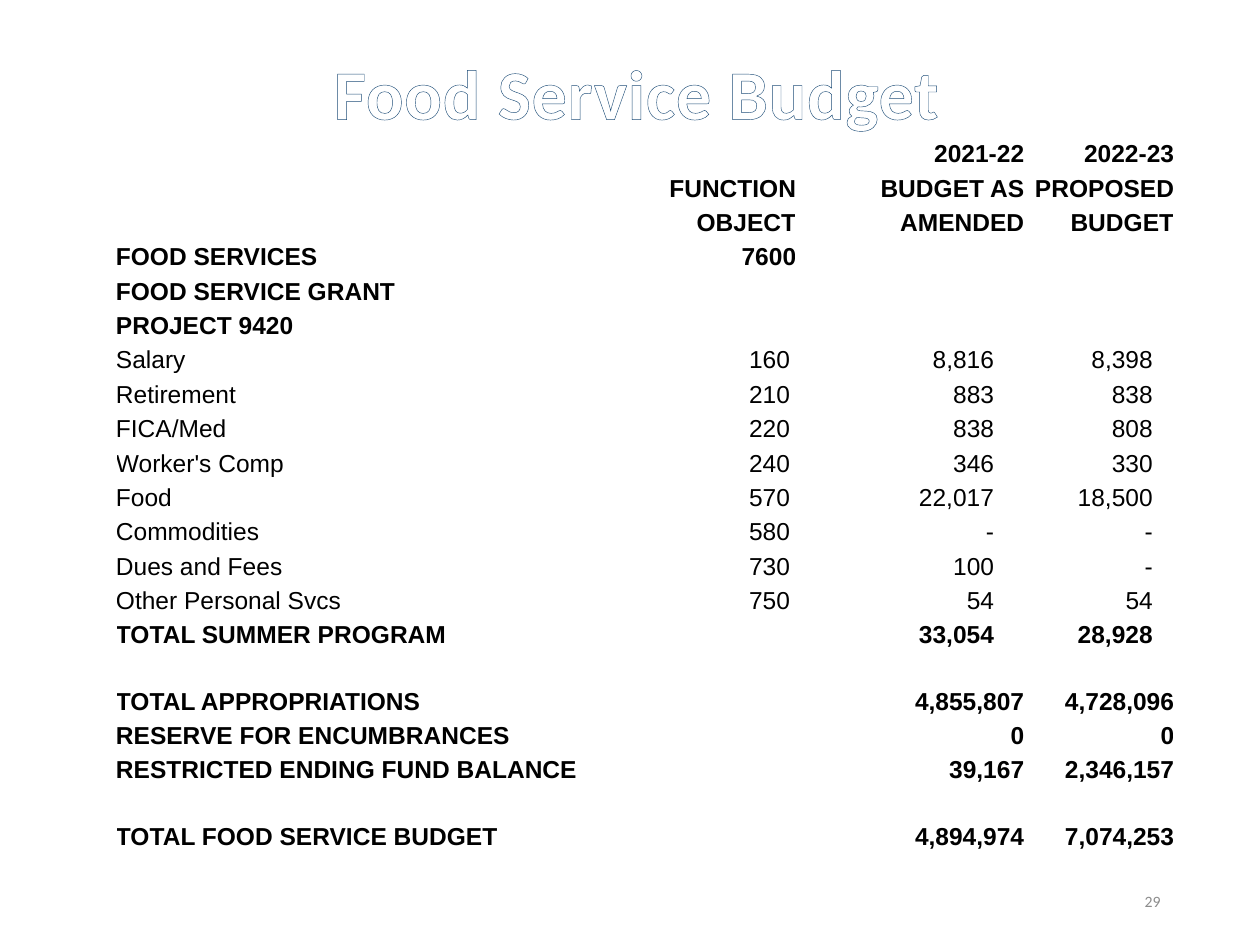
from lxml.etree import SubElement
from pptx import Presentation
from pptx.dml.color import RGBColor
from pptx.enum.text import MSO_ANCHOR, PP_ALIGN
from pptx.oxml.ns import qn
from pptx.util import Inches, Pt

WIDE, HIGH = Inches(10), Inches(7.5)
INK = {"text": "000000", "title": "FFFFFF", "edge": "1F4E79", "page": "8C8C8C"}
FORMS = {
    "title": {"name": "Calibri", "size": Pt(40), "bold": True},
    "page": {"name": "Calibri", "size": Pt(9), "bold": False},
    "total": {"name": "Arial", "size": Pt(14), "bold": True},
    "item": {"name": "Arial", "size": Pt(14), "bold": False},
}
COLS = [3.77, 0.54, 1.09, 1.81, 1.19]
FULL, GAP = 0.27, 0.25
PADS = {2: 0.05, 3: 0.24, 4: 0.17}

HEAD = [
    ("", "", "2021-22", "2022-23"),
    ("", "FUNCTION", "BUDGET AS", "PROPOSED"),
    ("", "OBJECT", "AMENDED", "BUDGET"),
    ("FOOD SERVICES", "7600", "", ""),
    ("FOOD SERVICE GRANT", "", "", ""),
    ("PROJECT 9420", "", "", ""),
]
ITEMS = [
    ("Salary", "160", "8,816", "8,398"),
    ("Retirement", "210", "883", "838"),
    ("FICA/Med", "220", "838", "808"),
    ("Worker's Comp", "240", "346", "330"),
    ("Food", "570", "22,017", "18,500"),
    ("Commodities", "580", "-", "-"),
    ("Dues and Fees", "730", "100", "-"),
    ("Other Personal Svcs", "750", "54", "54"),
]
SUMMER = [("TOTAL SUMMER PROGRAM", "", "33,054", "28,928")]
BLANK = [("", "", "", "")]
TOTALS = [
    ("TOTAL APPROPRIATIONS", "", "4,855,807", "4,728,096"),
    ("RESERVE FOR ENCUMBRANCES", "", "0", "0"),
    ("RESTRICTED ENDING FUND BALANCE", "", "39,167", "2,346,157"),
]
FINAL = [("TOTAL FOOD SERVICE BUDGET", "", "4,894,974", "7,074,253")]
BANDS = [
    (HEAD, "total", False), (ITEMS, "item", True), (SUMMER, "total", True),
    (BLANK, "total", False), (TOTALS, "total", False),
    (BLANK, "total", False), (FINAL, "total", False),
]


def place(box):
    x, y, w, h = box
    return [round(v) for v in (x * WIDE, y * HIGH, w * WIDE, h * HIGH)]


def style(para, text, form, ink, align):
    para.alignment = align
    run = para.add_run()
    run.text = text
    for key, val in FORMS[form].items():
        setattr(run.font, key, val)
    run.font.color.rgb = RGBColor.from_string(INK[ink])
    return run


def label(slide, box, text, form, align, frame):
    body = slide.shapes.add_textbox(*place(box)).text_frame
    for key, val in frame.items():
        setattr(body, key, val)
    return style(body.paragraphs[0], text, form, form, align)


def title(slide, box):
    frame = {"word_wrap": True, "vertical_anchor": MSO_ANCHOR.BOTTOM,
             "margin_left": Inches(0.07), "margin_bottom": 0}
    run = label(slide, box, "Food Service Budget", "title", PP_ALIGN.LEFT, frame)
    props = run.font._element
    props.set("spc", "50")
    line = SubElement(props, qn("a:ln"), w=str(Pt(1.05)))
    fill = SubElement(line, qn("a:solidFill"))
    SubElement(fill, qn("a:srgbClr"), val=INK["edge"])
    props.insert(0, line)


def page(slide, box):
    frame = {"word_wrap": True, "vertical_anchor": MSO_ANCHOR.MIDDLE}
    label(slide, box, "29", "page", PP_ALIGN.RIGHT, frame)


def entry(cell, text, form, pad, align):
    frame = {"margin_left": 0, "margin_top": 0, "margin_bottom": 0,
             "margin_right": Inches(pad), "vertical_anchor": MSO_ANCHOR.BOTTOM}
    for key, val in frame.items():
        setattr(cell, key, val)
    cell.fill.background()
    para = cell.text_frame.paragraphs[0]
    if text:
        style(para, text, form, "text", align)
    else:
        SubElement(para._p, qn("a:endParaRPr"), sz="1400")


def budget(slide, box):
    lines = [(row, form, pad) for rows, form, pad in BANDS for row in rows]
    spot = place(box)
    table = slide.shapes.add_table(len(lines), len(COLS), *spot).table
    table.first_row = table.horz_banding = False
    for col, part in zip(table.columns, COLS):
        col.width = round(spot[2] * part / sum(COLS))
    tall = [FULL if any(row) else GAP for row, _, _ in lines]
    for r, (row, form, pad) in enumerate(lines):
        table.rows[r].height = round(spot[3] * tall[r] / sum(tall))
        name, *nums = row
        for c, text in enumerate((name, "", *nums)):
            inset = PADS.get(c, 0) if pad else 0
            align = PP_ALIGN.RIGHT if c else PP_ALIGN.LEFT
            entry(table.cell(r, c), text, form, inset, align)


def main():
    deck = Presentation()
    deck.slide_width, deck.slide_height = WIDE, HIGH
    slide = deck.slides.add_slide(deck.slide_layouts[6])
    page(slide, (0.706, 6.95 / 7.5, 0.225, 0.4 / 7.5))
    title(slide, (0.258, 0.02 / 7.5, 0.583, 1.04 / 7.5))
    budget(slide, (0.092, 1.06 / 7.5, 0.84, 5.69 / 7.5))
    deck.save("out.pptx")


if __name__ == "__main__":
    main()
